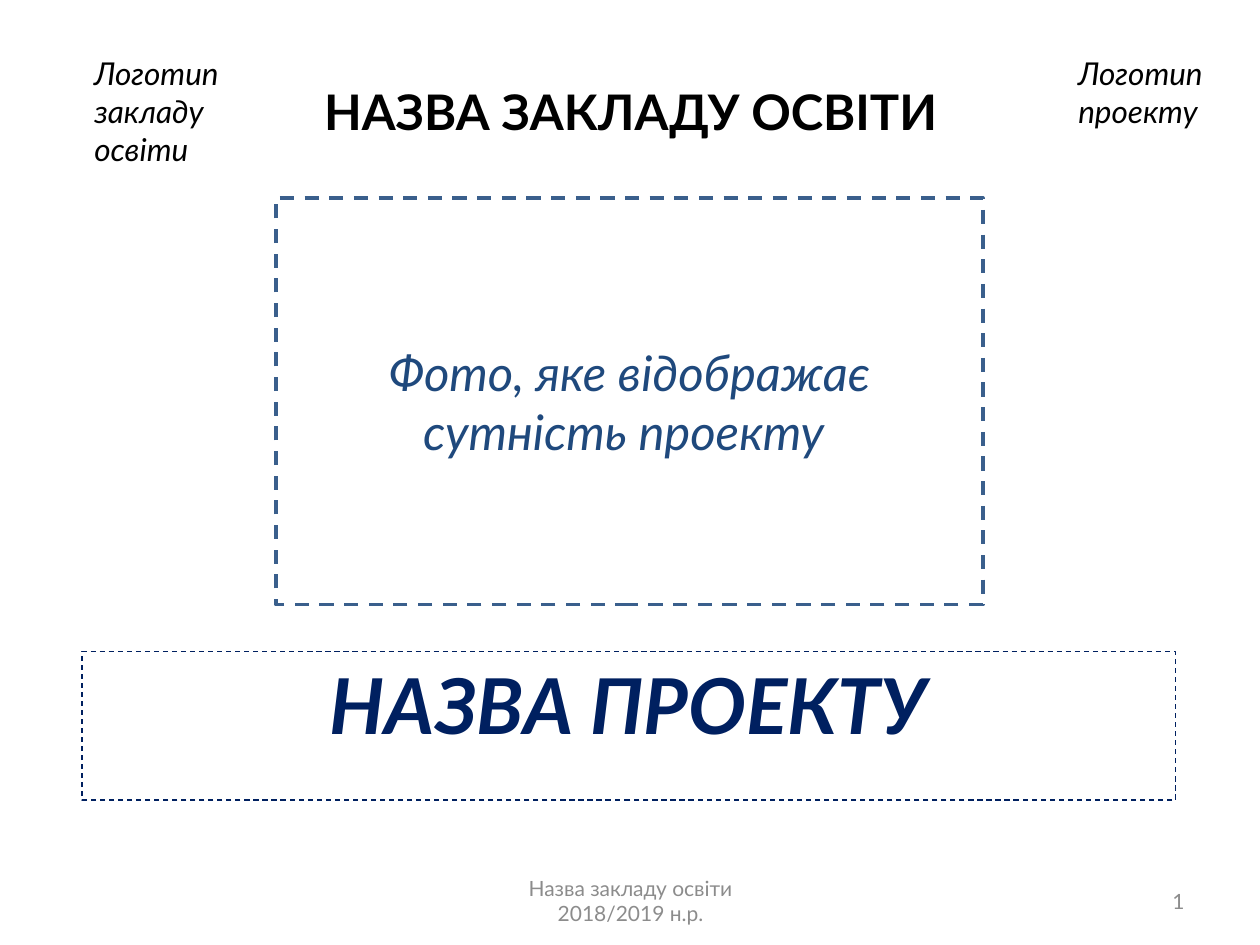
from pptx import Presentation
from pptx.dml.color import RGBColor
from pptx.enum.dml import MSO_LINE
from pptx.enum.shapes import MSO_SHAPE
from pptx.enum.text import MSO_ANCHOR, PP_ALIGN
from pptx.util import Inches, Pt

COLORS = {
    "white": "FFFFFF",
    "black": "000000",
    "gray": "8C8C8C",
    "navy": "002060",
    "blue": "1F497D",
    "frame": "3A5F8C",
}


def color(name):
    return RGBColor.from_string(COLORS[name])


def put_text(shape, text, size=18, ink="black", bold=False, italic=False,
             align=PP_ALIGN.CENTER, anchor=MSO_ANCHOR.TOP):
    """Fill a shape with text, one paragraph per line."""
    frame = shape.text_frame
    frame.word_wrap = True
    frame.vertical_anchor = anchor
    frame.text = text
    for para in frame.paragraphs:
        para.alignment = align
        font = para.runs[0].font
        font.name = "Lato"
        font.size = Pt(size)
        font.bold = bold
        font.italic = italic
        font.color.rgb = color(ink)


deck = Presentation()
deck.slide_width = Inches(10)
deck.slide_height = Inches(7.5)
slide = deck.slides.add_slide(deck.slide_layouts[6])
shapes = slide.shapes

# Dashed frames: photo area and project name
frames = [
    ((2.19, 1.57, 5.61, 3.23), "white", "frame", 2,
     "Фото, яке відображає сутність проекту ",
     dict(size=28, ink="blue", italic=True, anchor=MSO_ANCHOR.MIDDLE)),
    ((0.65, 5.17, 8.68, 1.18), None, "navy", 0.75, "НАЗВА ПРОЕКТУ",
     dict(size=44, ink="navy", bold=True, italic=True)),
]
for box, fill, line, width, text, style in frames:
    rect = shapes.add_shape(MSO_SHAPE.RECTANGLE, *map(Inches, box))
    rect.shadow.inherit = False
    if fill:
        rect.fill.solid()
        rect.fill.fore_color.rgb = color(fill)
    else:
        rect.fill.background()
    rect.line.color.rgb = color(line)
    rect.line.width = Pt(width)
    rect.line.dash_style = MSO_LINE.DASH
    put_text(rect, text, **style)

# Heading, logo captions and footer
logo = dict(italic=True, align=PP_ALIGN.LEFT)
footer = dict(size=12, ink="gray", anchor=MSO_ANCHOR.MIDDLE)
labels = [
    ((2.07, 0.6, 5.87, 0.57), "НАЗВА ЗАКЛАДУ ОСВІТИ", dict(size=28, bold=True)),
    ((0.65, 0.38, 1.26, 1.01), "Логотип\nзакладу освіти", logo),
    ((8.46, 0.38, 1.26, 0.71), "Логотип\nпроекту", logo),
    ((3.42, 6.95, 3.17, 0.4), "Назва закладу освіти\n2018/2019 н.р.", footer),
    ((7.17, 6.95, 2.33, 0.4), "1", dict(footer, align=PP_ALIGN.RIGHT)),
]
for box, text, style in labels:
    put_text(shapes.add_textbox(*map(Inches, box)), text, **style)

deck.save("out.pptx")
